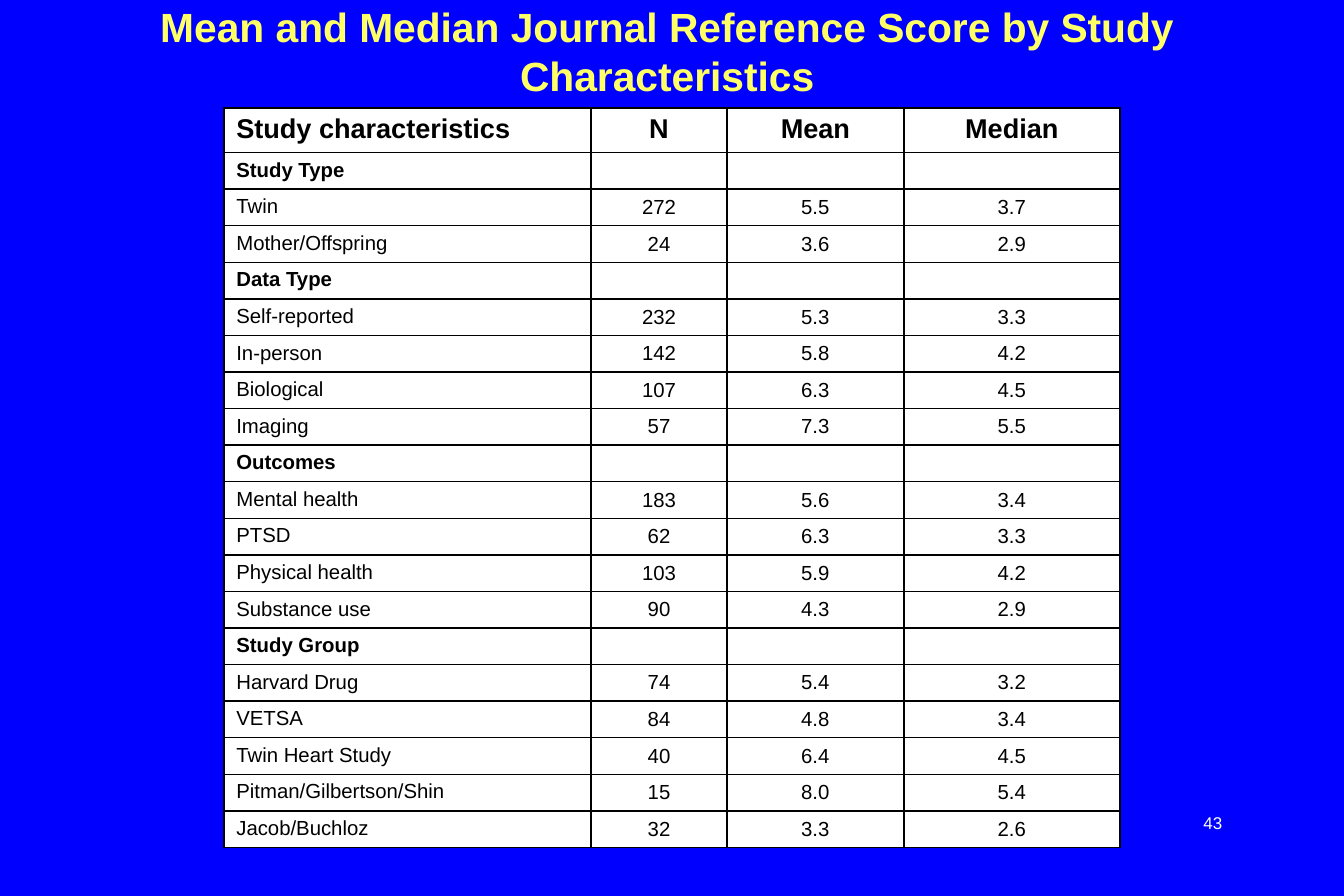
"""Builds the slide with the table of journal scores by study characteristics."""
from lxml.etree import SubElement
from pptx import Presentation
from pptx.dml.color import RGBColor
from pptx.enum.text import MSO_ANCHOR, MSO_AUTO_SIZE, PP_ALIGN
from pptx.oxml.ns import qn
from pptx.util import Cm, Pt


def paint(fill, color):
    fill.solid()
    fill.fore_color.rgb = RGBColor.from_string(color)


def style(para, size, color, bold=False, align=PP_ALIGN.LEFT):
    para.alignment = align
    font = para.font
    font.name, font.size, font.bold = "Arial", Pt(size), bold
    paint(font.fill, color)


deck = Presentation()
deck.slide_width, deck.slide_height = Cm(27.94), Cm(18.62)
slide = deck.slides.add_slide(deck.slide_layouts[5])
paint(slide.background.fill, "0000FF")

title = slide.shapes.title
title.left, title.top, title.width, title.height = Cm(0), Cm(0.4), Cm(27.74), Cm(1.3)
title.text_frame.text = "Mean and Median Journal Reference Score by Study Characteristics"
title.text_frame.auto_size = MSO_AUTO_SIZE.NONE
title.text_frame.word_wrap = False
title.text_frame.vertical_anchor = MSO_ANCHOR.MIDDLE
style(title.text_frame.paragraphs[0], 24, "FFFF66", True, PP_ALIGN.CENTER)

rows = [
    ("Study characteristics", "N", "Mean", "Median"),
    ("Study Type", "", "", ""),
    ("Twin", "272", "5.5", "3.7"),
    ("Mother/Offspring", "24", "3.6", "2.9"),
    ("Data Type", "", "", ""),
    ("Self-reported", "232", "5.3", "3.3"),
    ("In-person", "142", "5.8", "4.2"),
    ("Biological", "107", "6.3", "4.5"),
    ("Imaging", "57", "7.3", "5.5"),
    ("Outcomes", "", "", ""),
    ("Mental health", "183", "5.6", "3.4"),
    ("PTSD", "62", "6.3", "3.3"),
    ("Physical health", "103", "5.9", "4.2"),
    ("Substance use", "90", "4.3", "2.9"),
    ("Study Group", "", "", ""),
    ("Harvard Drug", "74", "5.4", "3.2"),
    ("VETSA", "84", "4.8", "3.4"),
    ("Twin Heart Study", "40", "6.4", "4.5"),
    ("Pitman/Gilbertson/Shin", "15", "8.0", "5.4"),
    ("Jacob/Buchloz", "32", "3.3", "2.6"),
]
widths = [7.63, 2.82, 3.68, 4.49]
frame = slide.shapes.add_table(len(rows), len(widths), Cm(4.66), Cm(2.24), Cm(18.62), Cm(15.44))
table = frame.table
for column, width in zip(table.columns, widths):
    column.width = Cm(width)

for r, values in enumerate(rows):
    head = r == 0
    size = 16 if head else 12
    table.rows[r].height = Cm(0.93 if head else 0.76)
    for c, value in enumerate(values):
        cell = table.cell(r, c)
        cell.text = value
        cell.vertical_anchor = MSO_ANCHOR.MIDDLE if c and not head else MSO_ANCHOR.TOP
        para = cell.text_frame.paragraphs[0]
        style(para, size, "000000", head or not values[1], PP_ALIGN.CENTER if c else PP_ALIGN.LEFT)
        if not value:
            SubElement(para._p, qn("a:endParaRPr"), sz=str(size * 100))
        props = cell._tc.get_or_add_tcPr()
        for side in ("a:lnL", "a:lnR", "a:lnT", "a:lnB"):
            line = SubElement(props, qn(side), w=str(Pt(1)))
            SubElement(SubElement(line, qn("a:solidFill")), qn("a:srgbClr"), val="000000")
        paint(cell.fill, "FFFFFF")

page = slide.shapes.add_textbox(Cm(24.77), Cm(16.76), Cm(1.09), Cm(1.24))
page.text_frame.word_wrap = True
page.text_frame.text = "43"
style(page.text_frame.paragraphs[0], 10, "FFFFFF")

deck.save("out.pptx")
